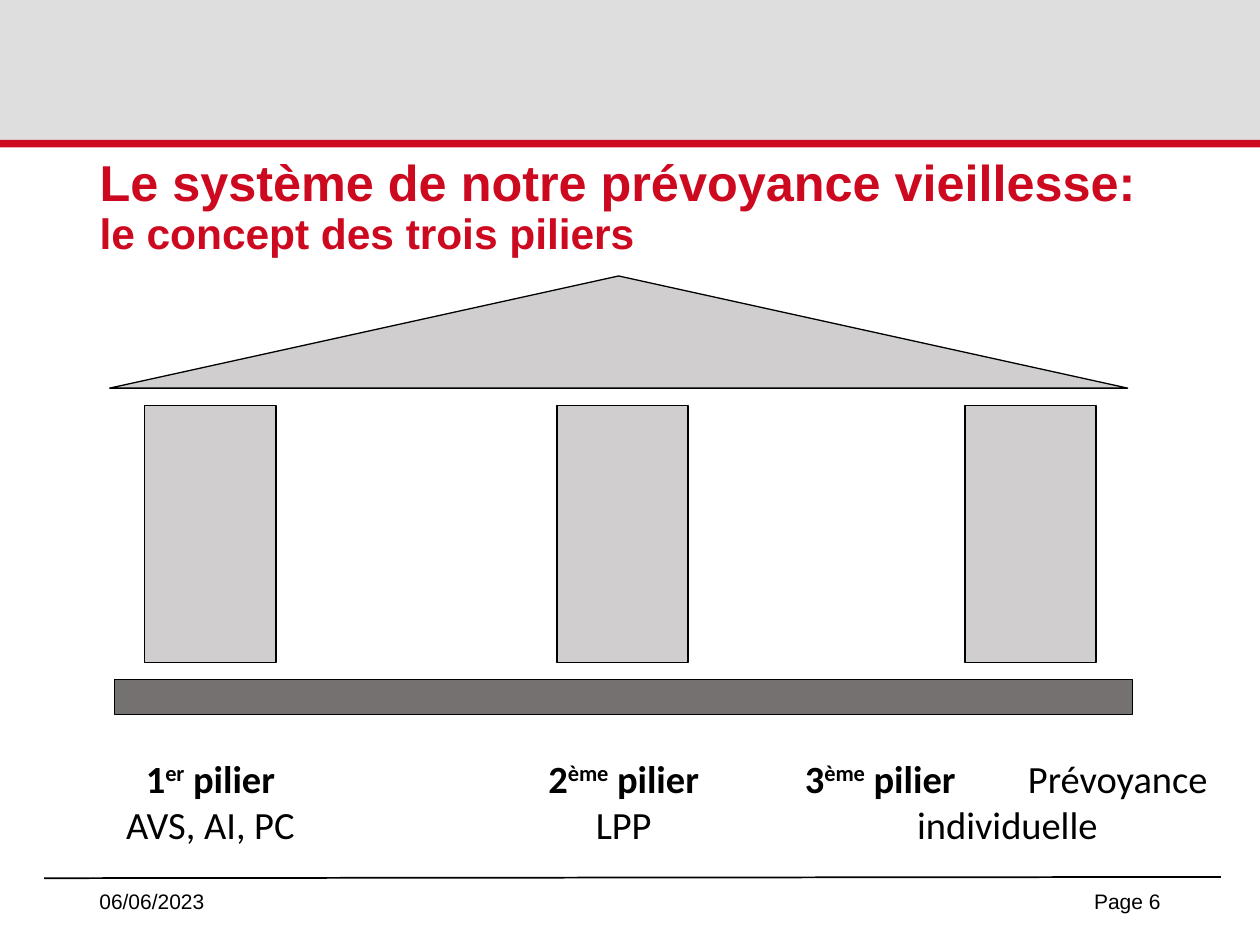
import pptx
import pptx.util
import pptx.dml.color
import pptx.enum.shapes
import pptx.enum.text
from lxml import etree

Inches = pptx.util.Inches
Pt = pptx.util.Pt
Shape = pptx.enum.shapes.MSO_SHAPE
Align = pptx.enum.text.PP_ALIGN
Anchor = pptx.enum.text.MSO_ANCHOR
DRAWING_NS = "{http://schemas.openxmlformats.org/drawingml/2006/main}"

RED, BLACK, STONE, PLINTH, BAND = "CD0920", "000000", "D0CECE", "767171", "DDDEDD"


def color(hex_code):
    """Return the RGB colour for a hex string."""
    return pptx.dml.color.RGBColor.from_string(hex_code)


class PillarSlide:
    """Hold the style and the slide, and draw each kind of element."""

    heading_font = "Arial"
    label_font = "Calibri"
    label_size = 22

    def __init__(self, deck):
        """Add a title-only slide to the deck."""
        self.slide = deck.slides.add_slide(deck.slide_layouts[5])

    def style(self, run, font, size, hex_code=BLACK, bold=False):
        """Format one run."""
        run.font.name = font
        run.font.size = Pt(size)
        run.font.bold = bold
        run.font.color.rgb = color(hex_code)

    def title(self, lines, left, top, width, height):
        """Place the title, one paragraph per (text, size) pair."""
        heading = self.slide.shapes.title
        heading.left, heading.top = Inches(left), Inches(top)
        heading.width, heading.height = Inches(width), Inches(height)
        frame = heading.text_frame
        frame.text = "\n".join(text for text, _ in lines)
        frame.auto_size = pptx.enum.text.MSO_AUTO_SIZE.NONE
        frame.vertical_anchor = Anchor.MIDDLE
        for paragraph, (_, size) in zip(frame.paragraphs, lines):
            paragraph.alignment = Align.LEFT
            paragraph.line_spacing = 0.9
            self.style(paragraph.runs[0], self.heading_font, size, RED, True)

    def block(self, kind, left, top, width, height, fill, outline=None):
        """Draw a filled shape with an optional thin outline."""
        shape = self.slide.shapes.add_shape(
            kind, Inches(left), Inches(top), Inches(width), Inches(height))
        shape.shadow.inherit = False
        shape.fill.solid()
        shape.fill.fore_color.rgb = color(fill)
        if outline:
            shape.line.color.rgb = color(outline)
            shape.line.width = Pt(0.75)
        else:
            shape.line.fill.background()

    def rule(self, x1, y1, x2, y2):
        """Draw a black one-point line."""
        line = self.slide.shapes.add_connector(
            pptx.enum.shapes.MSO_CONNECTOR.STRAIGHT,
            Inches(x1), Inches(y1), Inches(x2), Inches(y2))
        line.line.color.rgb = color(BLACK)
        line.line.width = Pt(1)
        etree.SubElement(line._element.spPr, DRAWING_NS + "effectLst")

    def text_frame(self, left, top, width, height, anchor):
        """Add a wrapping text box and return its frame."""
        box = self.slide.shapes.add_textbox(
            Inches(left), Inches(top), Inches(width), Inches(height))
        box.text_frame.word_wrap = True
        box.text_frame.vertical_anchor = anchor
        return box.text_frame

    def footer(self, text, left, alignment):
        """Write a small footer text."""
        frame = self.text_frame(left, 6.95, 2.25, 0.4, Anchor.MIDDLE)
        frame.text = text
        frame.paragraphs[0].alignment = alignment
        self.style(frame.paragraphs[0].runs[0], self.heading_font, 12)

    def label(self, number, ordinal, content, left, width, beside="", tab=0):
        """Name a pillar, with its content below and partly beside it."""
        frame = self.text_frame(left, 5.94, width, 0.87, Anchor.TOP)
        name = frame.paragraphs[0]
        name.alignment = Align.LEFT if beside else Align.CENTER
        if beside:
            stops = etree.SubElement(name._p.get_or_add_pPr(), DRAWING_NS + "tabLst")
            etree.SubElement(stops, DRAWING_NS + "tab", pos=str(Inches(tab)), algn="l")
        parts = [(number, True), (ordinal, True), (" pilier", True)]
        if beside:
            parts.append(("\t" + beside, False))
        for text, bold in parts:
            run = name.add_run()
            run.text = text
            self.style(run, self.label_font, self.label_size, bold=bold)
        name.runs[1].font._element.set("baseline", "30000")
        detail = frame.add_paragraph()
        detail.text = content
        detail.alignment = Align.CENTER
        self.style(detail.runs[0], self.label_font, self.label_size)


def main():
    """Build the three-pillar slide and save it."""
    deck = pptx.Presentation()
    deck.slide_width, deck.slide_height = Inches(10), Inches(7.5)
    page = PillarSlide(deck)

    page.block(Shape.RECTANGLE, 0, 0, 10, 1.11, BAND)
    page.block(Shape.RECTANGLE, 0, 1.11, 10, 0.06, RED)
    page.rule(0.35, 6.97, 9.69, 6.96)
    page.title([("Le système de notre prévoyance vieillesse:", 28.8),
                ("le concept des trois piliers", 24.3)], 0.69, 1.26, 8.62, 0.79)

    page.label("1", "er", "AVS, AI, PC", 0.64, 2.06)
    page.label("2", "ème", "LPP", 3.61, 2.68)
    page.label("3", "ème", "individuelle", 6.29, 3.41, beside="Prévoyance", tab=1.77)

    page.block(Shape.ISOSCELES_TRIANGLE, 0.87, 2.19, 8.08, 0.89, STONE, BLACK)
    page.block(Shape.RECTANGLE, 0.91, 5.39, 8.08, 0.28, PLINTH, BLACK)
    for pillar_left in (1.15, 4.42, 7.66):
        page.block(Shape.RECTANGLE, pillar_left, 3.22, 1.04, 2.04, STONE, BLACK)

    page.footer("06/06/2023", 0.69, Align.LEFT)
    page.footer("Page 6", 7.06, Align.RIGHT)
    deck.save("out.pptx")


if __name__ == "__main__":
    main()
